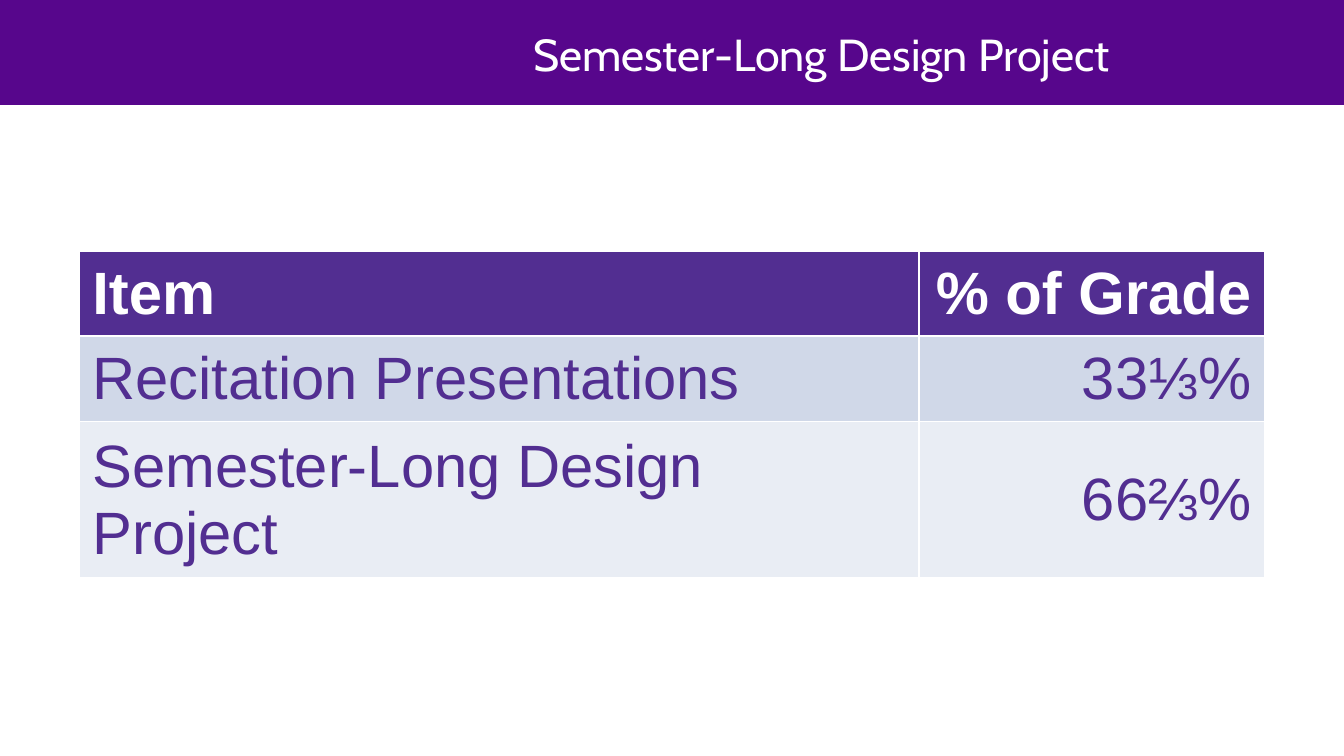
"""Build a slide with a title band and a table of grade weights."""
from pptx import Presentation
from pptx.dml.color import RGBColor
from pptx.enum.shapes import MSO_SHAPE
from pptx.enum.text import MSO_ANCHOR, PP_ALIGN
from pptx.util import Pt

EMU_PER_PX = 914400 / 134.4


def px(*lengths):
    return [round(length * EMU_PER_PX) for length in lengths]


def write(frame, text, size, font, color, align=PP_ALIGN.LEFT, bold=False):
    paragraph = frame.paragraphs[0]
    paragraph.alignment = align
    run = paragraph.add_run()
    run.text = text
    run.font.size = Pt(size)
    run.font.name = font
    run.font.bold = bold
    run.font.color.rgb = RGBColor.from_string(color)


presentation = Presentation()
presentation.slide_width, presentation.slide_height = px(1344, 756)
slide = presentation.slides.add_slide(presentation.slide_layouts[6])

band = slide.shapes.add_shape(MSO_SHAPE.RECTANGLE, *px(0, 0, 1345, 105))
band.shadow.inherit = False
band.fill.solid()
band.fill.fore_color.rgb = RGBColor.from_string("57068C")
band.line.fill.background()

title = slide.shapes.add_textbox(*px(333, 34, 977, 39)).text_frame
title.word_wrap = True
title.vertical_anchor = MSO_ANCHOR.MIDDLE
title.margin_left = title.margin_right = title.margin_top = title.margin_bottom = 0
write(title, "Semester-Long Design Project", 24, "Cabin", "FFFFFF", PP_ALIGN.CENTER)

rows = [
    ("Item", "% of Grade", "522E91", "FFFFFF"),
    ("Recitation Presentations", "33⅓%", "D0D8E8", "522E91"),
    ("Semester-Long Design Project", "66⅔%", "E9EDF4", "522E91"),
]
table = slide.shapes.add_table(len(rows), 2, *px(79, 251, 1186, 255)).table
for column, width in zip(table.columns, px(840, 346)):
    column.width = width

for row_index, (item, share, fill, color) in enumerate(rows):
    aligned_texts = [(item, PP_ALIGN.LEFT), (share, PP_ALIGN.RIGHT)]
    for column_index, (text, align) in enumerate(aligned_texts):
        cell = table.cell(row_index, column_index)
        cell.fill.solid()
        cell.fill.fore_color.rgb = RGBColor.from_string(fill)
        cell.vertical_anchor = MSO_ANCHOR.MIDDLE
        write(cell.text_frame, text, 32, "Arial", color, align, bold=row_index == 0)

presentation.save("out.pptx")
